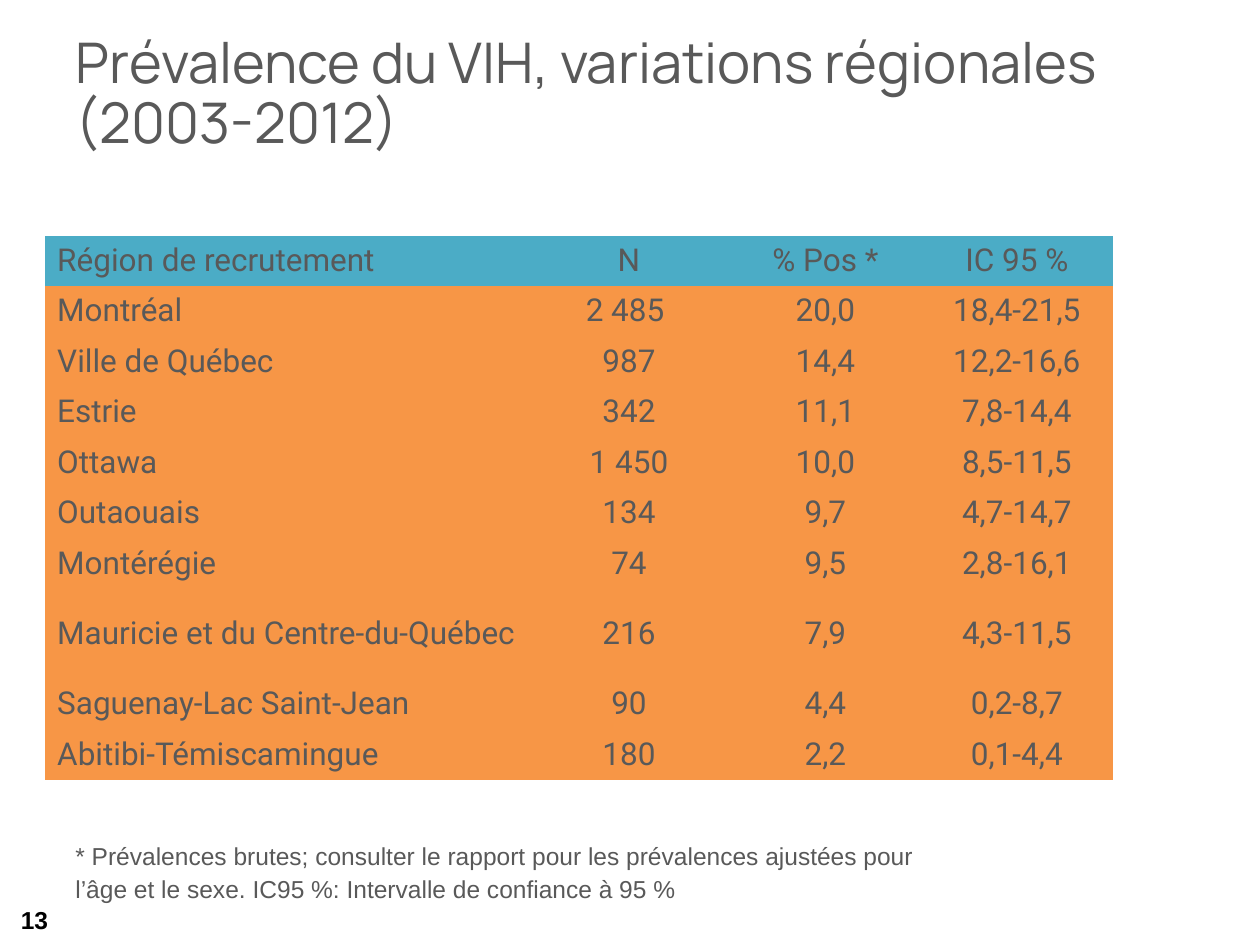
from pptx import Presentation
from pptx.dml.color import RGBColor
from pptx.enum import text as t
from pptx.oxml.ns import qn
from pptx.util import Cm, Pt

GREY = RGBColor(0x59, 0x59, 0x59)
BLACK = RGBColor(0, 0, 0)
TEAL = RGBColor(0x4B, 0xAC, 0xC6)
ORANGE = RGBColor(0xF7, 0x96, 0x46)

TITLE_FONT = {"name": "Manrope", "size": Pt(32), "bold": False}
TABLE_FONT = {"name": "Roboto", "size": Pt(18), "bold": False}
NOTE_FONT = {"name": "Arial", "size": Pt(14), "bold": False}
NUMBER_FONT = {"name": "Arial", "size": Pt(14), "bold": True}

NO_STYLE_NO_GRID = "{2D5ABB26-0587-4C30-8999-92F81FD0307C}"
LEFT, CENTER, RIGHT = t.PP_ALIGN.LEFT, t.PP_ALIGN.CENTER, t.PP_ALIGN.RIGHT

COLUMN_WIDTHS = [9.75, 4.06, 3.86, 3.86]
ROW_HEIGHT, TALL_ROW_HEIGHT = 1.01, 1.82
TALL_REGION = "Mauricie et du Centre-du-Québec"
PREVALENCE = [
    ("Région de recrutement", "N", "% Pos *", "IC 95 %"),
    ("Montréal", "2 485 ", "20,0", "18,4-21,5"),
    ("Ville de Québec", "987", "14,4", "12,2-16,6"),
    ("Estrie", "342", "11,1", "7,8-14,4"),
    ("Ottawa", "1 450", "10,0", "8,5-11,5"),
    ("Outaouais", "134", "9,7", "4,7-14,7"),
    ("Montérégie", "74", "9,5", "2,8-16,1"),
    (TALL_REGION, "216", "7,9", "4,3-11,5"),
    ("Saguenay-Lac Saint-Jean", "90", "4,4", "0,2-8,7"),
    ("Abitibi-Témiscamingue", "180", "2,2", "0,1-4,4"),
]


def write(frame, wording, font, color=GREY, align=LEFT, spacing=1.0):
    frame.text = wording
    paragraph = frame.paragraphs[0]
    paragraph.alignment = align
    paragraph.line_spacing = spacing
    for attribute, value in font.items():
        setattr(paragraph.runs[0].font, attribute, value)
    paragraph.runs[0].font.color.rgb = color


def add_title(slide, wording):
    title = slide.shapes.title
    title.left, title.top, title.width, title.height = Cm(1.27), Cm(0.33), Cm(22.86), Cm(3.18)
    title.text_frame.vertical_anchor = t.MSO_ANCHOR.MIDDLE
    write(title.text_frame, wording, TITLE_FONT, spacing=0.9)


def add_text(slide, wording, box, font, anchor=t.MSO_ANCHOR.TOP, **style):
    frame = slide.shapes.add_textbox(*(Cm(length) for length in box)).text_frame
    frame.word_wrap = True
    frame.vertical_anchor = anchor
    write(frame, wording, font, **style)


def add_prevalence_table(slide):
    heights = [TALL_ROW_HEIGHT if row[0] == TALL_REGION else ROW_HEIGHT for row in PREVALENCE]
    holder = slide.shapes.add_table(
        len(PREVALENCE), len(COLUMN_WIDTHS),
        Cm(0.9), Cm(4.75), Cm(sum(COLUMN_WIDTHS)), Cm(sum(heights)))
    next(holder.element.iter(qn("a:tableStyleId"))).text = NO_STYLE_NO_GRID
    table = holder.table
    table.horz_banding = False
    for column, width in zip(table.columns, COLUMN_WIDTHS):
        column.width = Cm(width)
    for r, (values, height) in enumerate(zip(PREVALENCE, heights)):
        table.rows[r].height = Cm(height)
        for c, value in enumerate(values):
            cell = table.cell(r, c)
            cell.vertical_anchor = t.MSO_ANCHOR.MIDDLE
            cell.fill.solid()
            cell.fill.fore_color.rgb = ORANGE if r else TEAL
            write(cell.text_frame, value, TABLE_FONT, align=CENTER if c else LEFT)


def main():
    deck = Presentation()
    deck.slide_width, deck.slide_height = Cm(25.4), Cm(19.05)
    slide = deck.slides.add_slide(deck.slide_layouts[5])
    add_title(slide, "Prévalence du VIH, variations régionales (2003-2012)")
    add_text(slide, "13", (0, 18.03, 1.22, 1.02), NUMBER_FONT,
             t.MSO_ANCHOR.MIDDLE, color=BLACK, align=RIGHT)
    add_prevalence_table(slide)
    add_text(slide, "* Prévalences brutes; consulter le rapport pour les prévalences ajustées "
             "pour l’âge et le sexe. IC95 %: Intervalle de confiance à 95 %",
             (1.27, 16.78, 18.5, 1.5), NOTE_FONT, spacing=1.1)
    deck.save("out.pptx")


if __name__ == "__main__":
    main()
